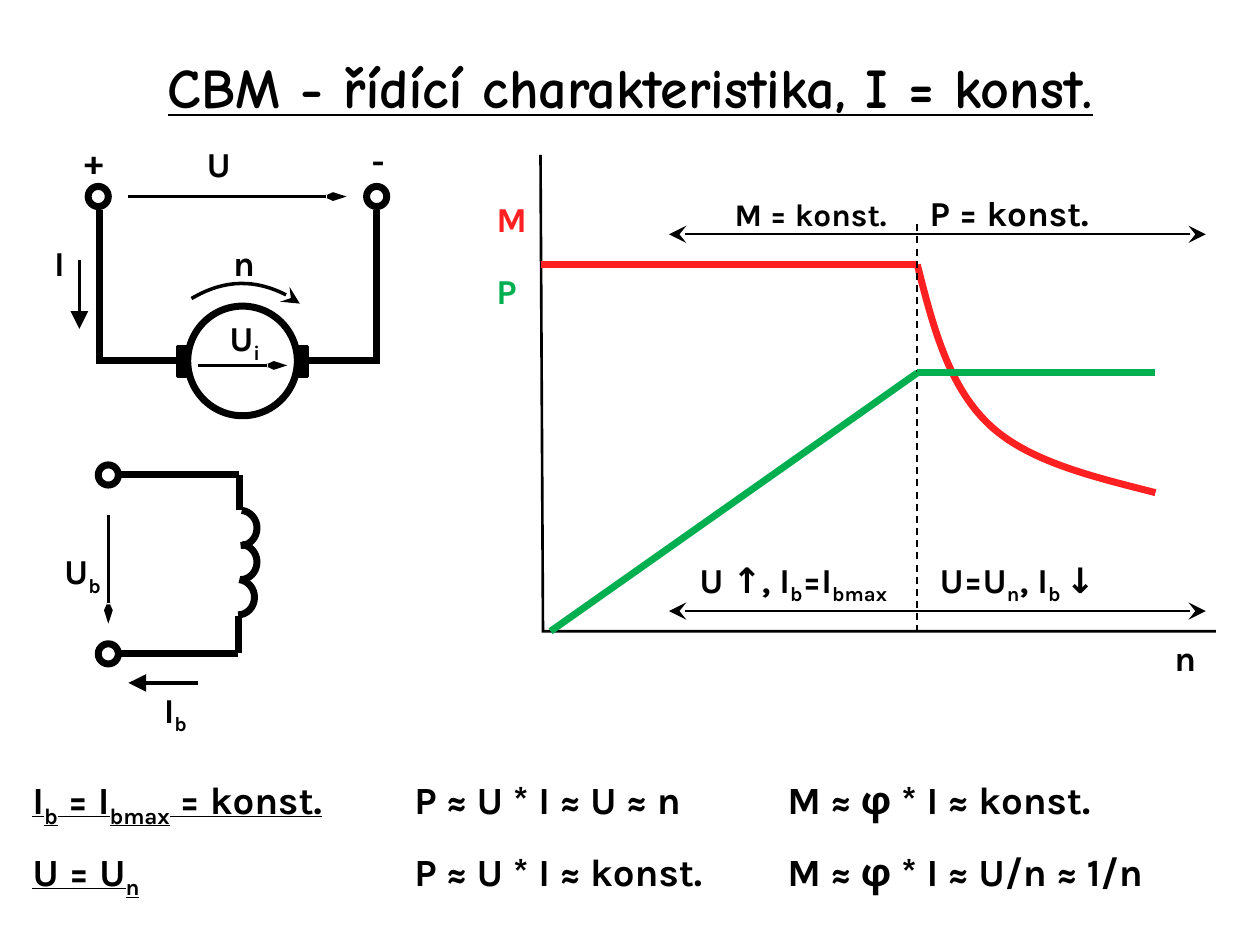
"""Build a slide on the control characteristic of a separately excited DC motor."""
from lxml.etree import SubElement
from pptx import Presentation
from pptx.dml.color import RGBColor
from pptx.enum.dml import MSO_LINE as Dash
from pptx.enum.shapes import MSO_CONNECTOR as Conn, MSO_SHAPE as Form
from pptx.enum.text import MSO_ANCHOR as Anchor, MSO_AUTO_SIZE as Fit, PP_ALIGN as Align
from pptx.oxml.ns import qn
from pptx.util import Inches, Pt

TONES = {"ink": "000000", "red": "FF2121", "green": "00B050"}

deck = Presentation()
deck.slide_width, deck.slide_height = Inches(10), Inches(7.5)
slide = deck.slides.add_slide(deck.slide_layouts[5])
shapes = slide.shapes


def write(para, text, size=20, tone="ink", under=None):
    """Add text in which every second part between bars is a subscript."""
    font = para.font
    font.name, font.size, font.bold = "Karla", Pt(size), True
    font.color.rgb = RGBColor.from_string(TONES[tone])
    for i, part in enumerate(text.split("|")):
        if part:
            run = para.add_run()
            run.text = part
            run.font.underline = under
            if i % 2:
                run.font._element.set("baseline", "-25000")


def draw(points, width, tone="ink", tail=None, dash=None, curved=False):
    """Draw a straight connector, an open path or a chain of Bézier curves."""
    spots = [(Inches(x), Inches(y)) for x, y in points]
    if len(spots) == 2:
        shape = shapes.add_connector(Conn.STRAIGHT, *spots[0], *spots[1])
    else:
        build = shapes.build_freeform(*spots[0])
        build.add_line_segments(spots[1:], close=False)
        shape = build.convert_to_shape()
        shape.fill.background()
    if curved:
        legs = list(shape._element.iter(qn("a:lnTo")))
        outline = legs[0].getparent()
        for i in range(0, len(legs), 3):
            curve = SubElement(outline, qn("a:cubicBezTo"))
            for leg in legs[i:i + 3]:
                curve.append(leg[0])
                outline.remove(leg)
    shape.line.width = Pt(width)
    shape.line.color.rgb = RGBColor.from_string(TONES[tone])
    if dash:
        shape.line.dash_style = dash
    pen = shape.line._get_or_add_ln()
    if len(spots) > 2 and not curved:
        SubElement(pen, qn("a:miter")).set("lim", "800000")
    if tail:
        end = SubElement(pen, qn("a:tailEnd"))
        end.set("type", tail)
        end.set("w", "sm" if tail == "arrow" else "lg")
        end.set("len", "lg")
    SubElement(shape._element.spPr, qn("a:effectLst"))


title = shapes.title
title.left, title.top, title.width, title.height = map(Inches, (0.2, 0.21, 9.61, 0.94))
title.text_frame.auto_size = Fit.NONE
title.text_frame.vertical_anchor = Anchor.MIDDLE
para = title.text_frame.paragraphs[0]
para.text = "CBM - řídící charakteristika, I = konst."
para.alignment = Align.CENTER
font = para.font
font.name, font.size, font.bold, font.underline = "Comic Neue", Pt(32), True, True
font.color.rgb = RGBColor.from_string(TONES["ink"])

frame = shapes.add_textbox(*map(Inches, (0.16, 6.11, 9.73, 1.02))).text_frame
frame.word_wrap = True
rows = [
    ("I|b| = I|bmax| = konst.", "\tP ≈ U * I ≈ U ≈ n \tM ≈ φ * I ≈ konst."),
    ("U = U|n", "\tP ≈ U * I ≈ konst.\tM ≈ φ * I ≈ U/n ≈ 1/n"),
]
for i, (head, rest) in enumerate(rows):
    para = frame.add_paragraph() if i else frame.paragraphs[0]
    para.space_before = Pt(11 * i)
    tabs = SubElement(para._p.get_or_add_pPr(), qn("a:tabLst"))
    for stop in (3.03, 5.99):
        tab = SubElement(tabs, qn("a:tab"))
        tab.set("pos", str(Inches(stop)))
        tab.set("algn", "l")
    write(para, head, 22, under=True)
    write(para, rest, 22, under=False)

lines = [
    ((1.9, 3.77), (1.9, 4.05)), ((1.89, 4.89), (1.89, 5.18)),
    ((1.9, 3.77), (0.96, 3.77)), ((1.89, 5.19), (0.94, 5.19)),
    ((0.79, 1.67), (0.79, 2.86), (1.4, 2.86)),
    ((2.99, 1.67), (2.99, 2.86), (2.45, 2.86)),
]
for points in lines:
    draw(points, 4)

arrows = [
    ((0.86, 4.09), (0.86, 4.95), "arrow"), ((1.02, 1.56), (2.75, 1.56), "arrow"),
    ((1.57, 2.9), (2.28, 2.9), "arrow"), ((1.57, 5.42), (1.02, 5.42), "triangle"),
    ((0.63, 2.06), (0.63, 2.61), "triangle"),
]
for start, end, tail in arrows:
    draw((start, end), 2, tail=tail)

parts = [(Form.OVAL, 1.49, 2.43, 0.87, 0.87)]
parts += [(Form.OVAL, x, y, 0.16, 0.16)
          for x, y in ((0.78, 3.69), (0.78, 5.11), (0.7, 1.48), (2.91, 1.48))]
parts += [(Form.RECTANGLE, x, 2.75, 0.08, 0.24) for x in (1.41, 2.36)]
for form, *box in parts:
    part = shapes.add_shape(form, *map(Inches, box))
    part.shadow.inherit = False
    part.line.color.rgb = RGBColor.from_string(TONES["ink"])
    if form == Form.OVAL:
        part.fill.background()
        part.line.width = Pt(4)
    else:
        part.fill.solid()
        part.fill.fore_color.rgb = RGBColor.from_string(TONES["ink"])
        part.line.width = Pt(2)

bend = [(0, 0), (0.07, 0), (0.13, -0.06), (0.13, -0.14),
        (0.13, -0.21), (0.08, -0.27), (0.01, -0.28)]
for x, y in ((1.91, 4.33), (1.91, 4.6), (1.89, 4.88)):
    draw([(x + dx, y + dy) for dx, dy in bend], 4, curved=True)
spin = [(1.52, 2.37), (1.79, 2.21), (2.13, 2.22), (2.38, 2.41)]
draw(spin, 2, tail="stealth", curved=True)
fall = [(7.28, 2.1), (7.4, 2.57), (7.52, 3.05), (7.84, 3.36),
        (8.15, 3.66), (8.66, 3.78), (9.17, 3.91)]
draw(fall, 4, "red", curved=True)

draw(((4.29, 1.23), (4.31, 5.01), (9.65, 5.01)), 1.5)
draw(((4.29, 2.1), (7.28, 2.1)), 4, "red")
draw(((7.28, 1.78), (7.28, 5.01)), 1, dash=Dash.DASH)
draw(((4.37, 5.01), (7.28, 2.96)), 4, "green")
draw(((7.28, 2.96), (9.17, 2.96)), 4, "green")
for y in (1.86, 4.85):
    for x in (5.31, 9.57):
        draw(((7.28, y), (x, y)), 1, tail="stealth")

marks = [
    ("n", 9.28, 5.01, 0.26, "ink"), ("M", 3.9, 1.53, 0.33, "red"),
    ("P", 3.9, 2.1, 0.26, "green"), ("U|b", 0.47, 4.32, 0.4, "ink"),
    ("I|b", 1.26, 5.42, 0.33, "ink"), ("U", 1.6, 1.09, 0.28, "ink"),
    ("+", 0.63, 1.07, 0.31, "ink"), ("-", 2.91, 1.07, 0.2, "ink"),
    ("U|i", 1.78, 2.47, 0.34, "ink"), ("n", 1.81, 1.88, 0.26, "ink"),
    ("I", 0.39, 1.88, 0.21, "ink"),
]
for text, left, top, width, tone in marks:
    frame = shapes.add_textbox(*map(Inches, (left, top, width, 0.41))).text_frame
    frame.margin_left = frame.margin_right = Inches(0.04)
    frame.margin_top = frame.margin_bottom = Inches(0.04)
    frame.word_wrap = False
    write(frame.paragraphs[0], text, tone=tone)

notes = [
    ("U ↑, I|b|=I|bmax| ", 5.24, 4.38, 1.97, 20, Align.RIGHT),
    ("U=U|n|, I|b |↓", 7.36, 4.38, 2.28, 20, Align.LEFT),
    ("M = konst. ", 5.63, 1.5, 1.57, 18, Align.RIGHT),
    ("P = konst.", 7.28, 1.47, 1.65, 20, Align.LEFT),
]
for text, left, top, width, size, side in notes:
    frame = shapes.add_textbox(*map(Inches, (left, top, width, 0.43))).text_frame
    frame.word_wrap = True
    frame.paragraphs[0].alignment = side
    write(frame.paragraphs[0], text, size)

deck.save("out.pptx")
